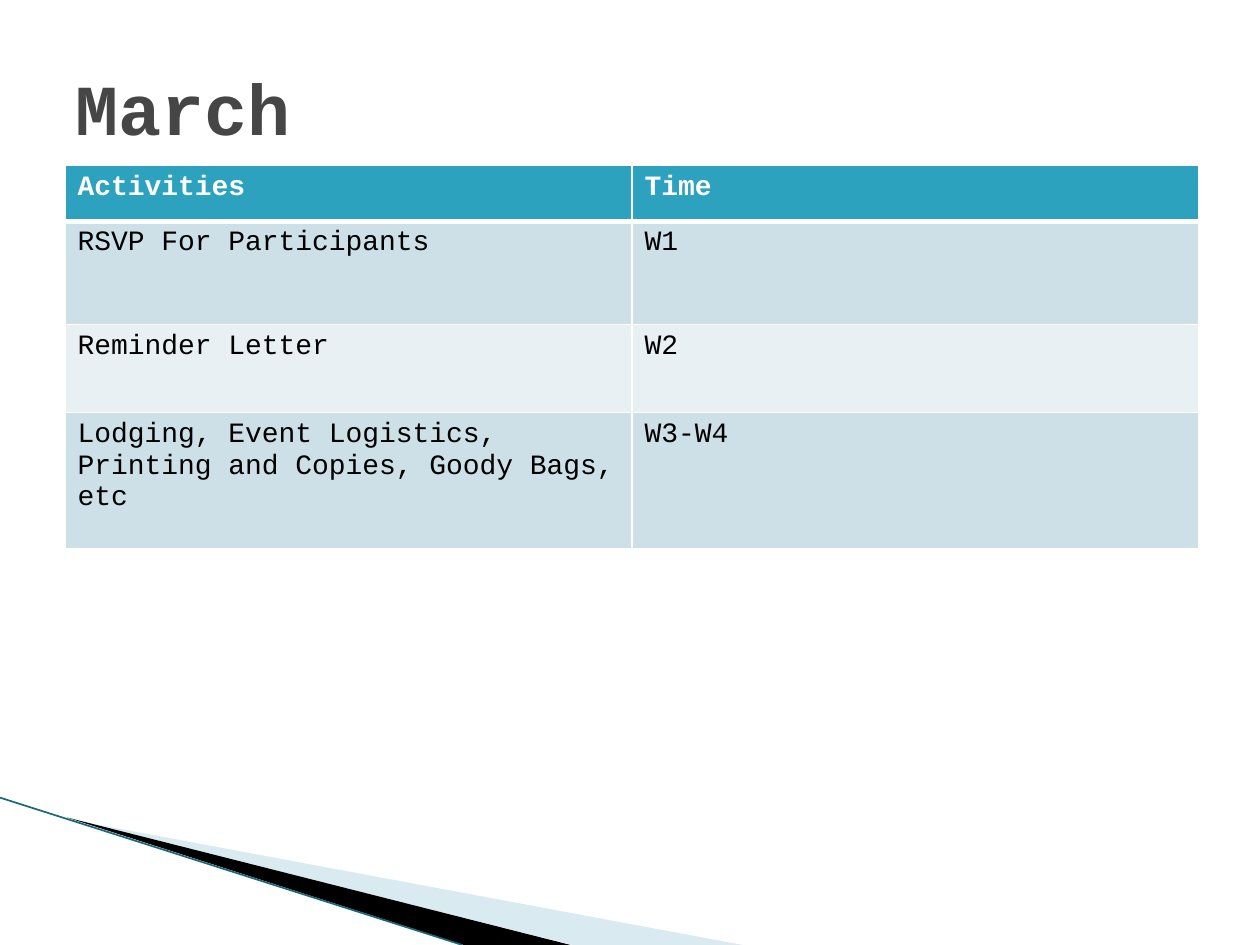
from lxml import etree
from pptx import Presentation
from pptx.dml import color
from pptx.enum import shapes, text
from pptx.oxml import ns
from pptx.util import Cm, Pt

FONT = "Courier New"
WHITE, BLACK = "FFFFFF", "000000"
HEADER, BAND_DARK, BAND_LIGHT = "2DA2BF", "CDE0E8", "E8F0F4"
SCHEDULE = [
    ("Activities", "Time"),
    ("RSVP For Participants", "W1"),
    ("Reminder Letter", "W2"),
    ("Lodging, Event Logistics, Printing and Copies, Goody Bags, etc", "W3-W4"),
]
ROW_HEIGHTS = (1.12, 2.08, 1.78, 2.74)


def rgb(value):
    """Turn a hex string into a colour."""
    return color.RGBColor.from_string(value)


def add_child(parent, tag, **attributes):
    """Append a DrawingML element."""
    return etree.SubElement(parent, ns.qn(tag), attributes)


def paint(target, value):
    """Give a shape or cell a solid fill."""
    target.fill.solid()
    target.fill.fore_color.rgb = rgb(value)


def add_run(paragraph, words, size, value, bold=False):
    """Add one formatted run."""
    run = paragraph.add_run()
    run.text = words
    run.font.name = FONT
    run.font.size = Pt(size)
    run.font.bold = bold
    run.font.color.rgb = rgb(value)


def add_wedge(slide, corners, value, opacity=100):
    """Draw a borderless polygon from its corners in centimetres."""
    points = [(Cm(x), Cm(y)) for x, y in corners]
    builder = slide.shapes.build_freeform(*points[0])
    builder.add_line_segments(points[1:])
    wedge = builder.convert_to_shape()
    wedge.shadow.inherit = False
    wedge.line.fill.background()
    paint(wedge, value)
    if opacity < 100:
        tint = wedge._element.spPr.find(".//" + ns.qn("a:srgbClr"))
        add_child(tint, "a:alpha", val=str(opacity * 1000))


def add_edge(slide, start, end, value, width):
    """Draw a straight line between two points in centimetres."""
    ends = [Cm(length) for length in start + end]
    edge = slide.shapes.add_connector(shapes.MSO_CONNECTOR.STRAIGHT, *ends)
    edge.line.color.rgb = rgb(value)
    edge.line.width = Pt(width)
    add_child(edge._element.spPr, "a:effectLst")


def add_title(slide, words):
    """Add the month heading."""
    heading = slide.shapes.add_textbox(Cm(1.27), Cm(0.76), Cm(22.86), Cm(2.77))
    frame = heading.text_frame
    frame.word_wrap = True
    frame.vertical_anchor = text.MSO_ANCHOR.MIDDLE
    add_run(frame.paragraphs[0], words, 41, "464646", True)


def add_borders(cell, bottom):
    """Outline a cell in white with its own bottom width."""
    properties = cell._tc.get_or_add_tcPr()
    for side, width in (("L", 1), ("R", 1), ("T", 1), ("B", bottom)):
        border = add_child(properties, "a:ln" + side, w=str(Pt(width)))
        add_child(add_child(border, "a:solidFill"), "a:srgbClr", val=WHITE)


def add_schedule(slide):
    """Add the table of activities and weeks."""
    frame = slide.shapes.add_table(
        len(SCHEDULE), 2, Cm(1.31), Cm(3.34), Cm(22.86), Cm(sum(ROW_HEIGHTS)))
    table = frame.table
    for r, (entries, height) in enumerate(zip(SCHEDULE, ROW_HEIGHTS)):
        table.rows[r].height = Cm(height)
        is_header = r == 0
        band = HEADER if is_header else BAND_DARK if r % 2 else BAND_LIGHT
        for c, words in enumerate(entries):
            cell = table.cell(r, c)
            add_borders(cell, 3 if is_header else 1)
            paint(cell, band)
            add_run(cell.text_frame.paragraphs[0], words, 16,
                    WHITE if is_header else BLACK, is_header)


def main():
    """Build and save the slide."""
    deck = Presentation()
    deck.slide_width, deck.slide_height = Cm(25.4), Cm(19.05)
    slide = deck.slides.add_slide(deck.slide_layouts[6])
    add_wedge(slide, [(1.4, 16.52), (14.97, 19.05), (11.55, 19.05)], "A0CBDC", 40)
    add_wedge(slide, [(1.35, 16.48), (11.5, 19.05), (9.35, 19.05)], BLACK)
    add_edge(slide, (0, 16.08), (9.32, 19.05), "16697A", 0.95)
    add_title(slide, "March")
    add_schedule(slide)
    deck.save("out.pptx")


if __name__ == "__main__":
    main()
